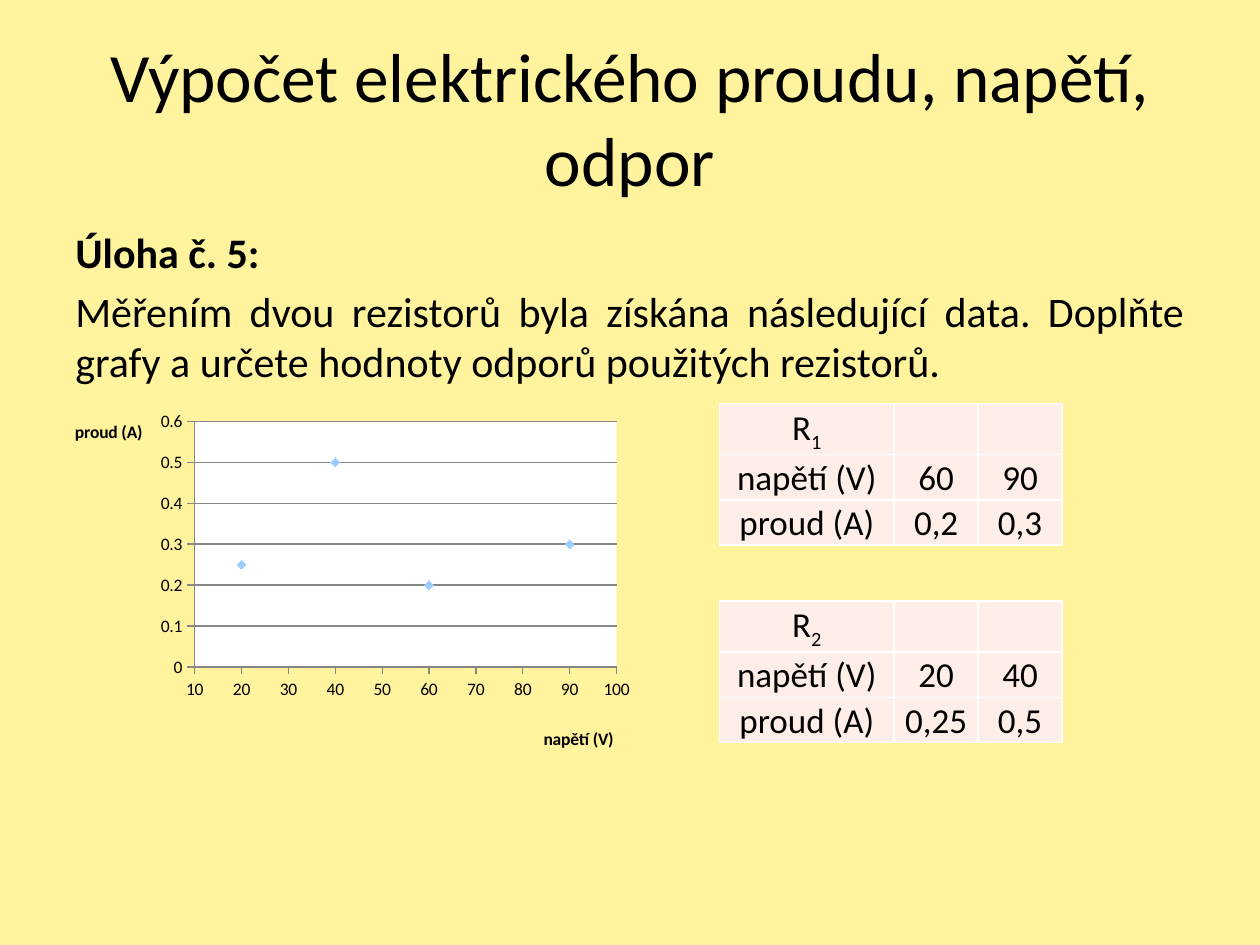
import lxml.etree
import pptx
import pptx.chart.data
import pptx.dml.color
import pptx.enum.chart
import pptx.enum.text
import pptx.oxml
import pptx.oxml.ns
import pptx.util

ALIGN = pptx.enum.text.PP_ALIGN
ANCHOR = pptx.enum.text.MSO_ANCHOR
WIDTH, HEIGHT = pptx.util.Inches(10), pptx.util.Inches(7.5)
FONT = "Calibri"
BLACK, WHITE, GREY = "000000", "FFFFFF", "878787"
BACKGROUND, CELL_FILL, MARKER = "FFF39D", "FFEDE8", "99CCFF"


def color(value):
    return pptx.dml.color.RGBColor.from_string(value)


def box(left, top, width, height):
    return tuple(int(share * side) for share, side in
                 zip((left, top, width, height), (WIDTH, HEIGHT, WIDTH, HEIGHT)))


def fill_with(fill, value):
    fill.solid()
    fill.fore_color.rgb = color(value)


def style_font(font, size, bold=False):
    font.name = FONT
    font.size = pptx.util.Pt(size)
    font.bold = bold
    font.color.rgb = color(BLACK)


def add_run(paragraph, text, size, bold=False):
    run = paragraph.add_run()
    run.text = text
    style_font(run.font, size, bold)
    return run


def add_text(slide, area, paragraphs, size, anchor, space=0):
    frame = slide.shapes.add_textbox(*area).text_frame
    frame.word_wrap = True
    frame.vertical_anchor = anchor
    for index, (text, alignment, bold) in enumerate(paragraphs):
        paragraph = frame.add_paragraph() if index else frame.paragraphs[0]
        paragraph.alignment = alignment
        paragraph.space_before = pptx.util.Pt(space)
        add_run(paragraph, text, size, bold)


def set_layout(parent, position, **shares):
    for layout in parent.findall(pptx.oxml.ns.qn("c:layout")):
        parent.remove(layout)
    target = '<c:layoutTarget val="inner"/>' if "w" in shares else ""
    modes = "".join(f'<c:{key}Mode val="edge"/>' for key in "xy")
    values = "".join(f'<c:{key} val="{share}"/>' for key, share in shares.items())
    parent.insert(position, pptx.oxml.parse_xml(
        f'<c:layout {pptx.oxml.ns.nsdecls("c")}><c:manualLayout>'
        f'{target}{modes}{values}</c:manualLayout></c:layout>'))


def style_axis(axis, title, place, low, high, step):
    axis.minimum_scale, axis.maximum_scale, axis.major_unit = low, high, step
    axis.major_tick_mark = pptx.enum.chart.XL_TICK_MARK.OUTSIDE
    axis.minor_tick_mark = pptx.enum.chart.XL_TICK_MARK.NONE
    axis.format.line.color.rgb = color(GREY)
    style_font(axis.tick_labels.font, 10)
    frame = axis.axis_title.text_frame
    add_run(frame.paragraphs[0], title, 10, True)
    element = axis.axis_title.element
    element.find(".//" + pptx.oxml.ns.qn("a:bodyPr")).set("rot", "0")
    set_layout(element, 1, x=place[0], y=place[1])


def add_scatter(slide, area, points):
    data = pptx.chart.data.XyChartData()
    series_data = data.add_series("Series 1")
    for voltage, current in points:
        series_data.add_data_point(voltage, current)
    chart = slide.shapes.add_chart(
        pptx.enum.chart.XL_CHART_TYPE.XY_SCATTER, *area, data).chart
    chart.has_title = False
    chart.has_legend = False
    style_font(chart.font, 10)
    chart.plots[0].vary_by_categories = False

    series = chart.plots[0].series[0]
    series.format.line.fill.background()
    series.marker.style = pptx.enum.chart.XL_MARKER_STYLE.DIAMOND
    series.marker.size = 5
    fill_with(series.marker.format.fill, MARKER)
    series.marker.format.line.color.rgb = color(MARKER)

    style_axis(chart.category_axis, "napětí (V) ", (0.83, 0.9), 10, 100, 10)
    style_axis(chart.value_axis, "proud (A)", (0.03, 0.04), 0, 0.6, 0.1)
    chart.category_axis.has_major_gridlines = False
    chart.value_axis.has_major_gridlines = True
    chart.value_axis.major_gridlines.format.line.color.rgb = color(GREY)

    plot = chart.element.find(".//" + pptx.oxml.ns.qn("c:plotArea"))
    set_layout(plot, 0, x=0.24, y=0.05, w=0.72, h=0.69)
    plot.append(pptx.oxml.parse_xml(
        f'<c:spPr {pptx.oxml.ns.nsdecls("c", "a")}><a:solidFill>'
        f'<a:srgbClr val="{WHITE}"/></a:solidFill></c:spPr>'))


def add_borders(cell):
    properties = cell._tc.get_or_add_tcPr()
    for index, side in enumerate("LRTB"):
        properties.insert(index, pptx.oxml.parse_xml(
            f'<a:ln{side} {pptx.oxml.ns.nsdecls("a")} w="12700"><a:solidFill>'
            f'<a:srgbClr val="{WHITE}"/></a:solidFill></a:ln{side}>'))


def add_measurements(slide, area, number, voltages, currents):
    rows = [("R", "", ""), ("napětí (V)", *voltages), ("proud (A)", *currents)]
    table = slide.shapes.add_table(len(rows), len(rows[0]), *area).table
    for column, share in zip(table.columns, (0.51, 0.245, 0.245)):
        column.width = int(area[2] * share)
    for row, share in zip(table.rows, (0.36, 0.32, 0.32)):
        row.height = int(area[3] * share)
    margin = pptx.util.Inches(0.01)
    for row_index, values in enumerate(rows):
        for column_index, text in enumerate(values):
            cell = table.cell(row_index, column_index)
            cell.margin_left = cell.margin_right = cell.margin_top = margin
            cell.margin_bottom = 0
            cell.vertical_anchor = ANCHOR.BOTTOM
            fill_with(cell.fill, CELL_FILL)
            add_borders(cell)
            paragraph = cell.text_frame.paragraphs[0]
            paragraph.alignment = ALIGN.CENTER
            if text:
                add_run(paragraph, text, 20)
    subscript = add_run(table.cell(0, 0).text_frame.paragraphs[0], number, 20)
    subscript.font._element.set("baseline", "-25000")


def main():
    presentation = pptx.Presentation()
    presentation.slide_width, presentation.slide_height = WIDTH, HEIGHT
    slide = presentation.slides.add_slide(presentation.slide_layouts[6])
    fill_with(slide.background.fill, BACKGROUND)

    add_text(slide, box(0.05, 0.04, 0.9, 0.167),
             [("Výpočet elektrického proudu, napětí, odpor", ALIGN.CENTER, False)],
             39.6, ANCHOR.MIDDLE)
    add_text(slide, box(0.05, 0.233, 0.9, 0.66),
             [("Úloha č. 5:", ALIGN.LEFT, True),
              ("Měřením dvou rezistorů byla získána následující data. "
               "Doplňte grafy a určete hodnoty odporů použitých rezistorů.",
               ALIGN.JUSTIFY, False)],
             24, ANCHOR.TOP, 4.8)
    add_scatter(slide, box(0.043, 0.427, 0.465, 0.377),
                [(60, 0.2), (90, 0.3), (40, 0.5), (20, 0.25)])
    measurements = [("1", ("60", "90"), ("0,2", "0,3")),
                    ("2", ("20", "40"), ("0,25", "0,5"))]
    for index, measurement in enumerate(measurements):
        add_measurements(slide, box(0.571, 0.427 + index * 0.209, 0.272, 0.15),
                         *measurement)
    presentation.save("out.pptx")


if __name__ == "__main__":
    main()
